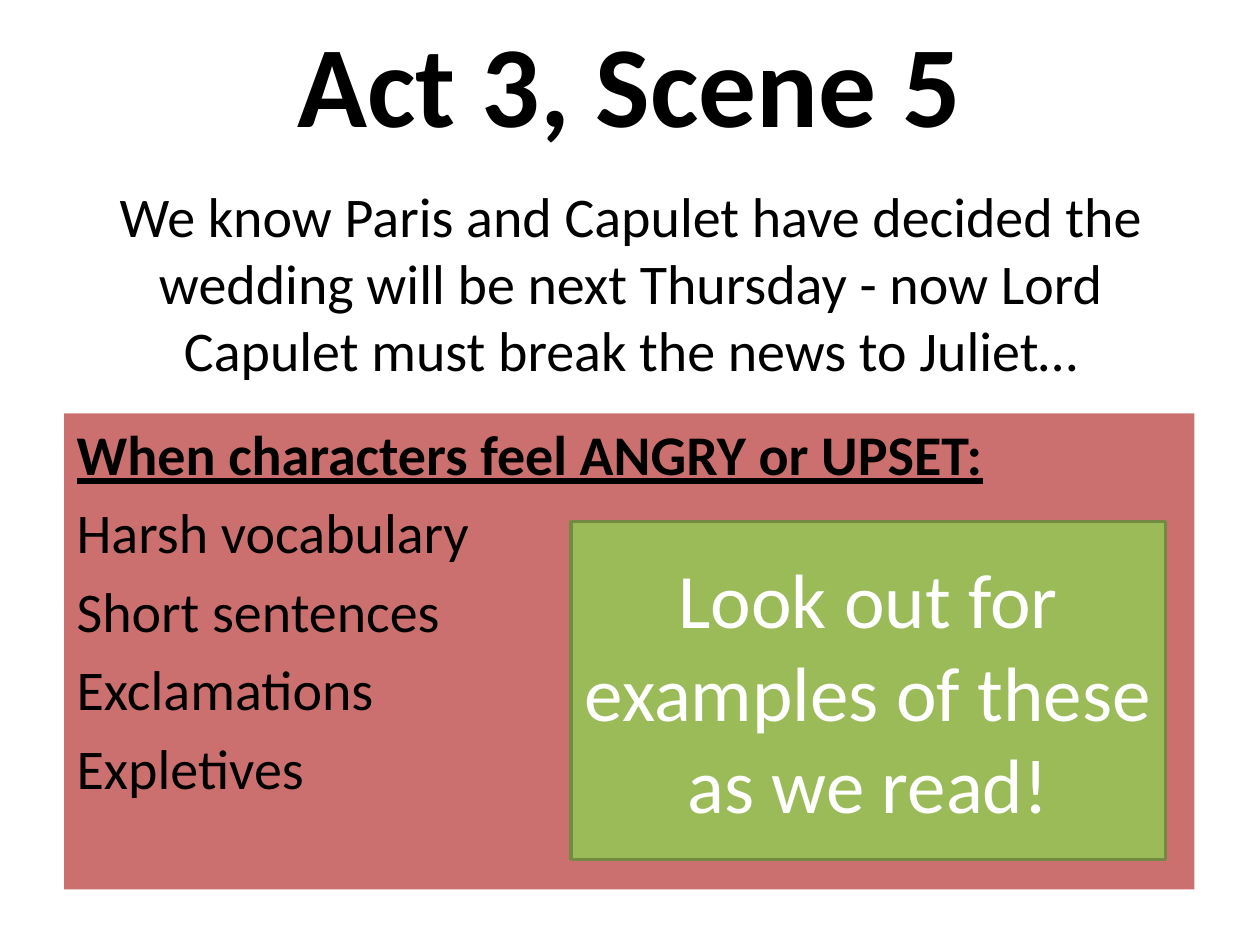
from dataclasses import dataclass
from typing import Optional

from lxml import etree
from pptx import Presentation
from pptx import util as u
from pptx.dml.color import RGBColor
from pptx.enum import shapes, text
from pptx.oxml.ns import qn


@dataclass(frozen=True)
class Theme:
    font: str = "Calibri"
    ink: str = "000000"
    paper: str = "FFFFFF"
    red: str = "C0504D"
    green: str = "9BBB59"
    green_edge: str = "738A42"
    title_size: float = 66
    body_size: float = 32
    callout_size: float = 44
    veil: int = 81
    paragraph_gap: float = 6.4


@dataclass(frozen=True)
class Line:
    words: str
    bold: bool = False
    underline: bool = False


@dataclass(frozen=True)
class Panel:
    left: float
    top: float
    width: float
    height: float
    lines: tuple[Line, ...]
    size: float
    color: str
    fill: Optional[str] = None
    opacity: int = 100
    edge: Optional[str] = None
    centered: bool = True
    anchor: text.MSO_ANCHOR = text.MSO_ANCHOR.TOP


THEME = Theme()

PANELS = (
    Panel(0.5, 0.02, 9, 1.25, (Line("Act 3, Scene 5", bold=True),),
          THEME.title_size, THEME.ink, anchor=text.MSO_ANCHOR.MIDDLE),
    Panel(0.51, 1.39, 9, 2,
          (Line("We know Paris and Capulet have decided the wedding will be next "
                "Thursday - now Lord Capulet must break the news to Juliet…"),),
          THEME.body_size, THEME.ink, fill=THEME.paper, opacity=THEME.veil),
    Panel(0.51, 3.28, 8.97, 3.78,
          (Line("When characters feel ANGRY or UPSET:", bold=True, underline=True),
           Line("Harsh vocabulary"),
           Line("Short sentences"),
           Line("Exclamations"),
           Line("Expletives")),
          THEME.body_size, THEME.ink, fill=THEME.red, opacity=THEME.veil,
          centered=False),
    Panel(4.53, 4.14, 4.72, 2.68,
          (Line("Look out for examples of these as we read!"),),
          THEME.callout_size, THEME.paper, fill=THEME.green,
          edge=THEME.green_edge, anchor=text.MSO_ANCHOR.MIDDLE),
)


def paint(box, panel: Panel) -> None:
    box.shadow.inherit = False
    box.fill.solid()
    box.fill.fore_color.rgb = RGBColor.from_string(panel.fill)
    if panel.opacity < 100:
        color = box.fill._xPr.find(qn("a:solidFill"))[0]
        etree.SubElement(color, qn("a:alpha"), val=str(panel.opacity * 1000))
    if panel.edge:
        box.line.color.rgb = RGBColor.from_string(panel.edge)
        box.line.width = u.Pt(2)
    else:
        box.line.fill.background()


def write(box, panel: Panel) -> None:
    frame = box.text_frame
    frame.word_wrap = True
    frame.vertical_anchor = panel.anchor
    for index, line in enumerate(panel.lines):
        para = frame.add_paragraph() if index else frame.paragraphs[0]
        if index:
            para.space_before = u.Pt(THEME.paragraph_gap)
        if panel.centered:
            para.alignment = text.PP_ALIGN.CENTER
        else:
            para.alignment = text.PP_ALIGN.LEFT
            properties = para._p.get_or_add_pPr()
            properties.set("marL", str(u.Inches(0.38)))
            properties.set("indent", str(u.Inches(-0.38)))
        span = para.add_run()
        span.text = line.words
        span.font.name = THEME.font
        span.font.size = u.Pt(panel.size)
        span.font.bold = line.bold
        span.font.underline = line.underline
        span.font.color.rgb = RGBColor.from_string(panel.color)


def draw(page, panel: Panel) -> None:
    place = [u.Inches(n) for n in (panel.left, panel.top, panel.width, panel.height)]
    if panel.fill:
        box = page.shapes.add_shape(shapes.MSO_SHAPE.RECTANGLE, *place)
        paint(box, panel)
    else:
        box = page.shapes.add_textbox(*place)
    write(box, panel)


def main() -> None:
    deck = Presentation()
    deck.slide_width, deck.slide_height = u.Inches(10), u.Inches(7.5)
    page = deck.slides.add_slide(deck.slide_layouts[6])
    for panel in PANELS:
        draw(page, panel)
    deck.save("out.pptx")


if __name__ == "__main__":
    main()
